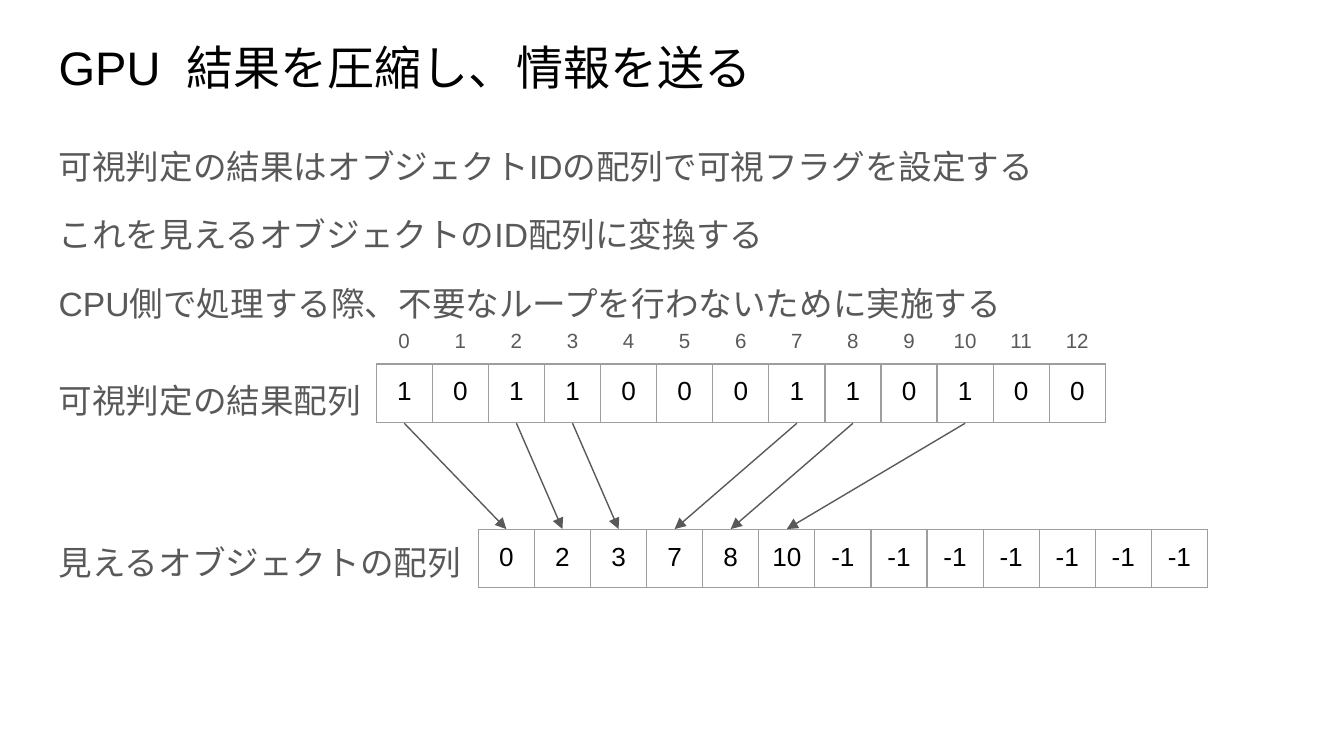
from lxml import etree
from pptx import Presentation
from pptx import util as u
from pptx.dml.color import RGBColor
from pptx.enum import shapes, text
from pptx.oxml import ns

BLACK = RGBColor(0x00, 0x00, 0x00)
GRAY = RGBColor(0x59, 0x59, 0x59)
BORDER = RGBColor(0x9E, 0x9E, 0x9E)

MARGIN, FULL_WIDTH, INSET = 0.86, 23.67, 0.25
CELL_WIDTH, CELL_HEIGHT = 1.06, 1.1
FLAGS_LEFT, FLAGS_TOP = 7.11, 6.88
IDS_LEFT, IDS_TOP = 9.04, 10.01
ARROW_TOP, ARROW_BOTTOM = 8.0, 10.0

FLAGS = [1, 0, 1, 1, 0, 0, 0, 1, 1, 0, 1, 0, 0]
VISIBLE_IDS = [index for index, flag in enumerate(FLAGS) if flag]
PADDED_IDS = VISIBLE_IDS + [-1] * (len(FLAGS) - len(VISIBLE_IDS))


def column_center(index, left=0):
    return left + CELL_WIDTH * (index + 0.5)


def add_xml(parent, tag, **attributes):
    return etree.SubElement(parent, ns.qn(tag), attributes)


class SlideBuilder:
    """Holds the text style and the slide being filled."""

    font_name = "Arial"
    line_width = u.Pt(0.75)

    def __init__(self, slide):
        self.slide = slide

    def style(self, paragraph, size, color):
        font = paragraph.font
        font.name, font.size = self.font_name, u.Pt(size)
        font.color.rgb = color

    def text_box(self, left, top, width, height, lines, size, color=GRAY,
                 anchor=text.MSO_ANCHOR.TOP, inset=INSET, spacing=1.0, tabs=()):
        box = self.slide.shapes.add_textbox(u.Cm(left), u.Cm(top), u.Cm(width), u.Cm(height))
        frame = box.text_frame
        frame.word_wrap, frame.vertical_anchor = True, anchor
        frame.margin_left = frame.margin_right = u.Cm(inset)
        frame.margin_top = frame.margin_bottom = u.Cm(inset)
        frame.text = "\n".join(lines)
        for number, paragraph in enumerate(frame.paragraphs):
            paragraph.line_spacing = spacing
            if number:
                paragraph.space_before = u.Pt(12)
            if tabs:
                tab_list = add_xml(paragraph._p.get_or_add_pPr(), "a:tabLst")
                for position in tabs:
                    add_xml(tab_list, "a:tab", pos=str(u.Cm(position)), algn="ctr")
            self.style(paragraph, size, color)

    def label(self, middle, caption):
        self.text_box(MARGIN, middle - 0.6, 8.5, 1.2, [caption], 18,
                      anchor=text.MSO_ANCHOR.MIDDLE, inset=INSET)

    def array(self, left, top, values):
        """Draws the values as a one-row table."""
        frame = self.slide.shapes.add_table(1, len(values), u.Cm(left), u.Cm(top),
                                            u.Cm(CELL_WIDTH * len(values)), u.Cm(CELL_HEIGHT))
        table = frame.table
        table.first_row = table.horz_banding = False
        for column, cell, value in zip(table.columns, table.iter_cells(), values):
            column.width = u.Cm(CELL_WIDTH)
            cell.margin_left = cell.margin_right = u.Cm(INSET)
            cell.margin_top = cell.margin_bottom = u.Cm(INSET)
            cell.text = str(value)
            paragraph = cell.text_frame.paragraphs[0]
            paragraph.alignment = text.PP_ALIGN.CENTER
            self.style(paragraph, 14, BLACK)
            self.cell_borders(cell)
            cell.fill.background()

    def cell_borders(self, cell):
        properties = cell._tc.get_or_add_tcPr()
        for side in ("a:lnL", "a:lnR", "a:lnT", "a:lnB"):
            line = add_xml(properties, side, w=str(self.line_width))
            add_xml(add_xml(line, "a:solidFill"), "a:srgbClr", val=str(BORDER))

    def arrow(self, start_x, start_y, end_x, end_y):
        connector = self.slide.shapes.add_connector(
            shapes.MSO_CONNECTOR.STRAIGHT,
            u.Cm(start_x), u.Cm(start_y), u.Cm(end_x), u.Cm(end_y))
        connector.line.color.rgb = GRAY
        connector.line.width = self.line_width
        add_xml(connector.line._get_or_add_ln(), "a:tailEnd", type="triangle")
        add_xml(connector._element.spPr, "a:effectLst")


def main():
    presentation = Presentation()
    presentation.slide_width, presentation.slide_height = u.Cm(25.4), u.Cm(14.29)
    builder = SlideBuilder(presentation.slides.add_slide(presentation.slide_layouts[6]))

    builder.text_box(MARGIN, 0.48, FULL_WIDTH, 1.6, ["GPU  結果を圧縮し、情報を送る"], 25.2, BLACK)
    builder.text_box(MARGIN, 2.39, FULL_WIDTH, 4.47, [
        "可視判定の結果はオブジェクトIDの配列で可視フラグを設定する",
        "これを見えるオブジェクトのID配列に変換する",
        "CPU側で処理する際、不要なループを行わないために実施する",
    ], 18, spacing=1.15)

    builder.array(FLAGS_LEFT, FLAGS_TOP, FLAGS)
    builder.array(IDS_LEFT, IDS_TOP, PADDED_IDS)
    for slot, index in enumerate(VISIBLE_IDS):
        builder.arrow(column_center(index, FLAGS_LEFT), ARROW_TOP,
                      column_center(slot, IDS_LEFT), ARROW_BOTTOM)

    indices = range(len(FLAGS))
    builder.text_box(FLAGS_LEFT, 6.13, CELL_WIDTH * len(FLAGS), 0.6,
                     ["".join(f"\t{index}" for index in indices)], 11,
                     anchor=text.MSO_ANCHOR.MIDDLE, inset=0,
                     tabs=[column_center(index) for index in indices])
    builder.label(7.57, "可視判定の結果配列")
    builder.label(10.62, "見えるオブジェクトの配列")

    presentation.save("out.pptx")


if __name__ == "__main__":
    main()
